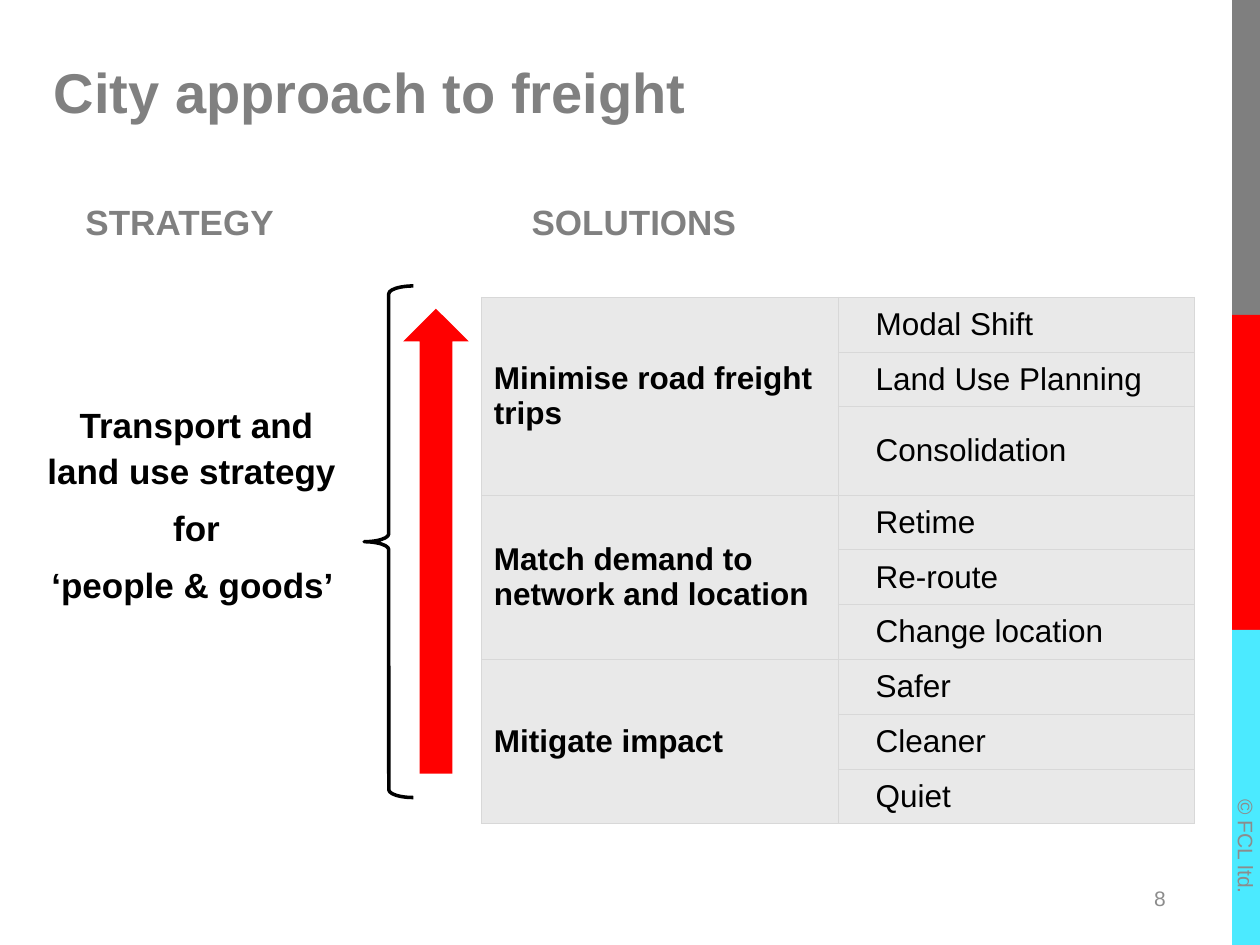
from lxml import etree
from pptx import Presentation
from pptx.dml.color import RGBColor
from pptx.enum import shapes, text
from pptx.oxml.ns import qn
from pptx.util import Inches, Pt

GREY = RGBColor(0x80, 0x80, 0x80)
LIGHT_GREY = RGBColor(0x8C, 0x8C, 0x8C)
BAR_GREY = RGBColor(0x7F, 0x7F, 0x7F)
RED = RGBColor(0xFF, 0, 0)
CYAN = RGBColor(0x4B, 0xEA, 0xFF)
BLACK = RGBColor(0, 0, 0)
CELL_FILL = RGBColor(0xE9, 0xE9, 0xE9)
BORDER = "D8D8D8"

SOLUTIONS = [
    ("Minimise road freight trips", ["Modal Shift", "Land Use Planning", "Consolidation"]),
    ("Match demand to network and location", ["Retime", "Re-route", "Change location"]),
    ("Mitigate impact", ["Safer", "Cleaner", "Quiet"]),
]
ROW, TALL_ROW = 0.435, 0.66


def write(tf, *lines, size=18, color=BLACK, bold=False, align=None,
          anchor=text.MSO_ANCHOR.TOP, spacing=None, before=0):
    tf.word_wrap = True
    tf.vertical_anchor = anchor
    for i, line in enumerate(lines):
        p = tf.add_paragraph() if i else tf.paragraphs[0]
        p.alignment = align
        if spacing:
            p.line_spacing = spacing
        if i and before:
            p.space_before = Pt(before)
        r = p.add_run()
        r.text = line
        r.font.name = "Arial"
        r.font.size = Pt(size)
        r.font.bold = bold
        r.font.color.rgb = color


def add_text(s, x, y, w, h, *lines, **fmt):
    sp = s.shapes.add_textbox(Inches(x), Inches(y), Inches(w), Inches(h))
    write(sp.text_frame, *lines, **fmt)
    return sp


def add_shape(s, kind, x, y, w, h, fill=None, line=None):
    sp = s.shapes.add_shape(kind, Inches(x), Inches(y), Inches(w), Inches(h))
    sp.shadow.inherit = False
    if fill is None:
        sp.fill.background()
    else:
        sp.fill.solid()
        sp.fill.fore_color.rgb = fill
    if line is None:
        sp.line.fill.background()
    else:
        sp.line.color.rgb = line
        sp.line.width = Pt(2)
    return sp


def side_band(s, x, y, w, h):
    bar = h / 3
    for i, color in enumerate((BAR_GREY, RED, CYAN)):
        add_shape(s, shapes.MSO_SHAPE.RECTANGLE, x, y + i * bar, w, bar, fill=color)
    sp = add_text(s, x - 0.62, y + 6.6, 1.46, 0.24, "© FCL ltd.", size=12,
                  color=LIGHT_GREY, align=text.PP_ALIGN.CENTER,
                  anchor=text.MSO_ANCHOR.MIDDLE)
    sp.rotation = 90


def strategy(s, x, y, w):
    add_text(s, x + 0.37, y, w - 0.18, 0.44, "STRATEGY", size=20, color=GREY, bold=True)
    add_text(s, x, y + 1.58, w, 2.84, "Transport and land use strategy ", "for",
             "‘people & goods’ ", size=20, bold=True,
             align=text.PP_ALIGN.CENTER, spacing=1.1, before=6)


def brace_and_arrow(s, x, y, h):
    add_shape(s, shapes.MSO_SHAPE.UP_ARROW, x + 0.31, y + 0.18, 0.52, 3.69, fill=RED)
    brace = add_shape(s, shapes.MSO_SHAPE.LEFT_BRACE, x, y, 0.39, h, line=BLACK)
    brace.adjustments[0] = 0.16


def set_borders(cell):
    pr = cell._tc.get_or_add_tcPr()
    for i, side in enumerate(("a:lnL", "a:lnR", "a:lnT", "a:lnB")):
        ln = etree.Element(qn(side), w=str(Pt(0.5)))
        fill = etree.SubElement(ln, qn("a:solidFill"))
        etree.SubElement(fill, qn("a:srgbClr"), val=BORDER)
        pr.insert(i, ln)


def solutions_table(s, x, y, w):
    heights = [ROW] * 9
    heights[2] = TALL_ROW
    table = s.shapes.add_table(len(heights), 2, Inches(x), Inches(y),
                               Inches(w), Inches(sum(heights))).table
    table.first_row = table.horz_banding = False
    for row, height in zip(table.rows, heights):
        row.height = Inches(height)
    for cell in table.iter_cells():
        cell.fill.solid()
        cell.fill.fore_color.rgb = CELL_FILL
        cell.vertical_anchor = text.MSO_ANCHOR.MIDDLE
        set_borders(cell)
    for group, (aim, measures) in enumerate(SOLUTIONS):
        top = group * 3
        table.cell(top, 0).merge(table.cell(top + 2, 0))
        write(table.cell(top, 0).text_frame, aim, bold=True,
              anchor=text.MSO_ANCHOR.MIDDLE)
        for i, measure in enumerate(measures):
            cell = table.cell(top + i, 1)
            cell.margin_left = Inches(0.3)
            write(cell.text_frame, measure, anchor=text.MSO_ANCHOR.MIDDLE)


def main():
    prs = Presentation()
    prs.slide_width, prs.slide_height = Inches(10), Inches(7.5)
    s = prs.slides.add_slide(prs.slide_layouts[6])
    side_band(s, 9.78, 0, 0.24, 7.5)
    add_text(s, 0.33, 0, 8.62, 1.51, "City approach to freight", size=32, color=GREY,
             bold=True, anchor=text.MSO_ANCHOR.MIDDLE, spacing=0.9)
    strategy(s, 0.21, 1.54, 2.7)
    brace_and_arrow(s, 2.89, 2.27, 4.06)
    add_text(s, 4.12, 1.54, 2.98, 0.44, "SOLUTIONS", size=20, color=GREY, bold=True)
    solutions_table(s, 3.82, 2.36, 5.66)
    add_text(s, 7.1, 6.93, 2.25, 0.4, "8", size=12, color=LIGHT_GREY,
             align=text.PP_ALIGN.RIGHT, anchor=text.MSO_ANCHOR.MIDDLE)
    prs.save("out.pptx")


if __name__ == "__main__":
    main()
